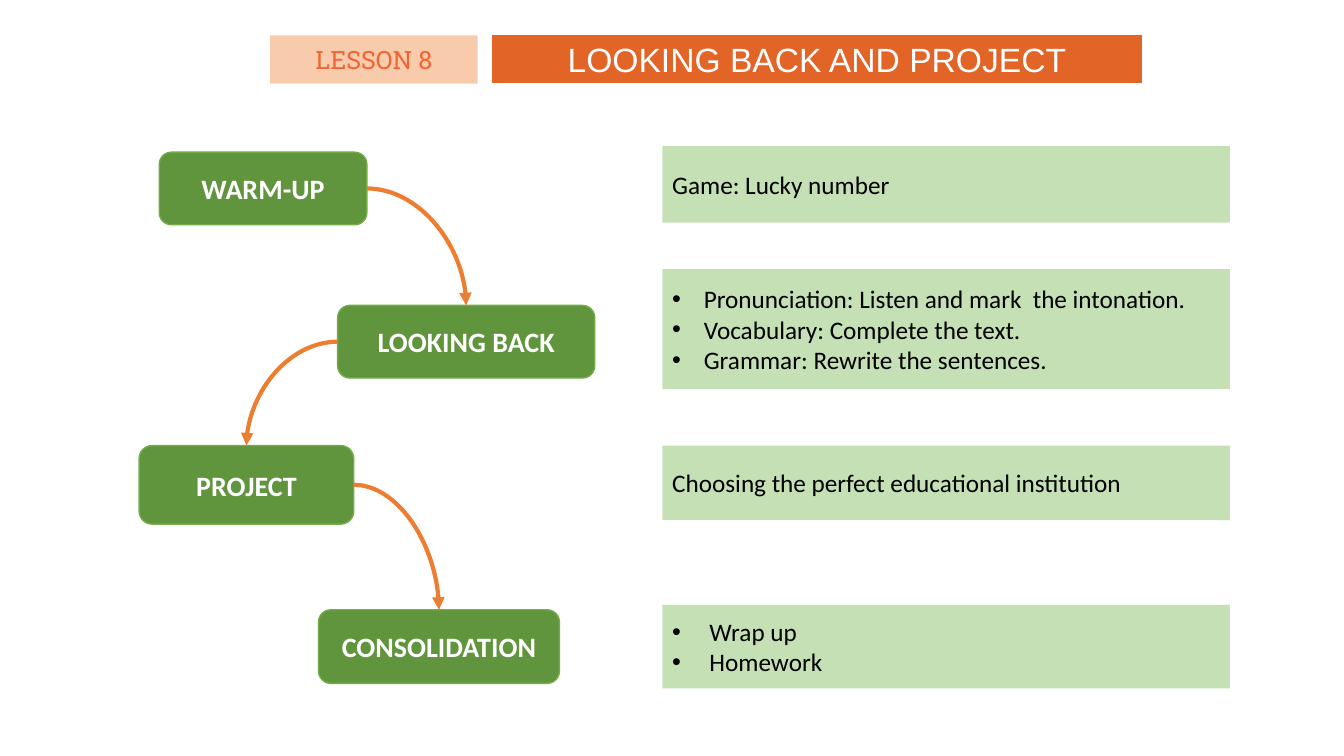
from dataclasses import dataclass
from itertools import pairwise
from typing import Any, Optional

from lxml.etree import SubElement
from pptx import Presentation
from pptx.dml.color import RGBColor
from pptx.enum.shapes import MSO_CONNECTOR as Connector, MSO_SHAPE as Preset
from pptx.enum.text import MSO_ANCHOR as Anchor, MSO_AUTO_SIZE as AutoSize, PP_ALIGN as Align
from pptx.oxml.ns import qn
from pptx.util import Inches, Pt

SLIDE_WIDTH, SLIDE_HEIGHT = Inches(13.33), Inches(7.5)
COLUMN, ROW = SLIDE_WIDTH / 40, SLIDE_HEIGHT / 30
BULLET_INDENT = 0.94  # columns
PANEL_LEFT, PANEL_WIDTH = 19.71, 16.89  # columns
TOP, LEFT, RIGHT = 0, 1, 3  # connection sites of a rectangle


@dataclass(frozen=True)
class TextStyle:
    font: str
    size: float
    color: str
    bold: bool = False
    align: Align = Align.CENTER


@dataclass(frozen=True)
class BoxStyle:
    fill: str
    text: TextStyle
    line: Optional[str] = None
    line_width: float = 0


@dataclass(frozen=True)
class Theme:
    title: BoxStyle = BoxStyle("E36427", TextStyle("Arial", 24, "FFFFFF"), "FFFFFF", 1.5)
    lesson: BoxStyle = BoxStyle("F8CBAD", TextStyle("Roboto Slab", 18, "F26532"))
    stage: BoxStyle = BoxStyle("61953D", TextStyle("Calibri", 20, "FFFFFF", True), "70AD47", 1)
    panel: BoxStyle = BoxStyle("C5E0B4", TextStyle("Calibri", 18, "000000", align=Align.LEFT))
    arrow: str = "ED7D31"
    arrow_width: float = 3


@dataclass(frozen=True)
class Area:
    """Left and width in columns, top and height in rows."""
    left: float
    top: float
    width: float
    height: float


@dataclass(frozen=True)
class Stage:
    name: str
    area: Area
    panel_top: float
    panel_height: float
    details: tuple[str, ...]


THEME = Theme()
TITLE_AREA = Area(14.61, 1.36, 19.41, 1.96)
LESSON_AREA = Area(8.04, 1.4, 6.18, 1.92)
STAGES = (
    Stage("WARM-UP", Area(4.74, 6.04, 6.18, 2.88), 5.8, 3.04, ("Game: Lucky number",)),
    Stage("LOOKING BACK", Area(10.05, 12.12, 7.65, 2.88), 10.68, 4.76, (
        "Pronunciation: Listen and mark  the intonation.",
        "Vocabulary: Complete the text.",
        "Grammar: Rewrite the sentences.")),
    Stage("PROJECT", Area(4.14, 17.68, 6.39, 3.12), 17.68, 2.96,
          ("Choosing the perfect educational institution",)),
    Stage("CONSOLIDATION", Area(9.48, 24.2, 7.17, 2.92), 24, 3.32,
          (" Wrap up", " Homework")),
)


def set_attributes(target: Any, values: dict[str, Any]) -> None:
    for name, value in values.items():
        setattr(target, name, value)


def position(area: Area) -> dict[str, int]:
    return {"left": round(area.left * COLUMN), "top": round(area.top * ROW),
            "width": round(area.width * COLUMN), "height": round(area.height * ROW)}


def add_bullet(paragraph: Any) -> None:
    properties = paragraph._p.get_or_add_pPr()
    indent = round(BULLET_INDENT * COLUMN)
    properties.set("marL", str(indent))
    properties.set("indent", str(-indent))
    SubElement(properties, qn("a:buFont"), typeface="Arial")
    SubElement(properties, qn("a:buChar"), char="•")


def format_box(shape: Any, style: BoxStyle, lines: tuple[str, ...]) -> None:
    """Paint the shape and write its lines, bulleted when there are several."""
    shape.fill.solid()
    shape.fill.fore_color.rgb = RGBColor.from_string(style.fill)
    if style.line:
        shape.line.color.rgb = RGBColor.from_string(style.line)
        shape.line.width = Pt(style.line_width)
    else:
        shape.line.fill.background()
    frame = shape.text_frame
    set_attributes(frame, {"word_wrap": True, "auto_size": AutoSize.NONE,
                           "vertical_anchor": Anchor.MIDDLE})
    frame.text = "\n".join(lines)
    text = style.text
    for paragraph in frame.paragraphs:
        paragraph.alignment = text.align
        font = paragraph.runs[0].font
        set_attributes(font, {"name": text.font, "size": Pt(text.size), "bold": text.bold})
        font.color.rgb = RGBColor.from_string(text.color)
        if len(lines) > 1:
            add_bullet(paragraph)


def add_box(slide: Any, preset: Preset, area: Area, style: BoxStyle,
            lines: tuple[str, ...]) -> Any:
    shape = slide.shapes.add_shape(preset, **position(area))
    shape.shadow.inherit = False
    format_box(shape, style, lines)
    return shape


def add_arrow(slide: Any, start: Any, end: Any) -> None:
    """Curve from the side of start that faces end to the top of end."""
    side = RIGHT if end.left > start.left else LEFT
    connector = slide.shapes.add_connector(Connector.CURVE, 0, 0, 0, 0)
    connector.begin_connect(start, side)
    connector.end_connect(end, TOP)
    connector.line.color.rgb = RGBColor.from_string(THEME.arrow)
    connector.line.width = Pt(THEME.arrow_width)
    properties = connector._element.spPr
    properties.find(qn("a:prstGeom")).set("prst", "curvedConnector2")
    SubElement(properties.find(qn("a:ln")), qn("a:tailEnd"), type="triangle")
    SubElement(properties, qn("a:effectLst"))


def main() -> None:
    presentation = Presentation()
    set_attributes(presentation, {"slide_width": SLIDE_WIDTH, "slide_height": SLIDE_HEIGHT})
    slide = presentation.slides.add_slide(presentation.slide_layouts.get_by_name("Title Only"))

    title = slide.shapes.title
    set_attributes(title, position(TITLE_AREA))
    format_box(title, THEME.title, ("LOOKING BACK AND PROJECT",))
    add_box(slide, Preset.RECTANGLE, LESSON_AREA, THEME.lesson, ("LESSON 8",))

    stage_boxes = []
    for stage in STAGES:
        stage_boxes.append(add_box(slide, Preset.ROUNDED_RECTANGLE, stage.area,
                                   THEME.stage, (stage.name,)))
        panel_area = Area(PANEL_LEFT, stage.panel_top, PANEL_WIDTH, stage.panel_height)
        add_box(slide, Preset.RECTANGLE, panel_area, THEME.panel, stage.details)
    for start, end in pairwise(stage_boxes):
        add_arrow(slide, start, end)

    presentation.save("out.pptx")


if __name__ == "__main__":
    main()
